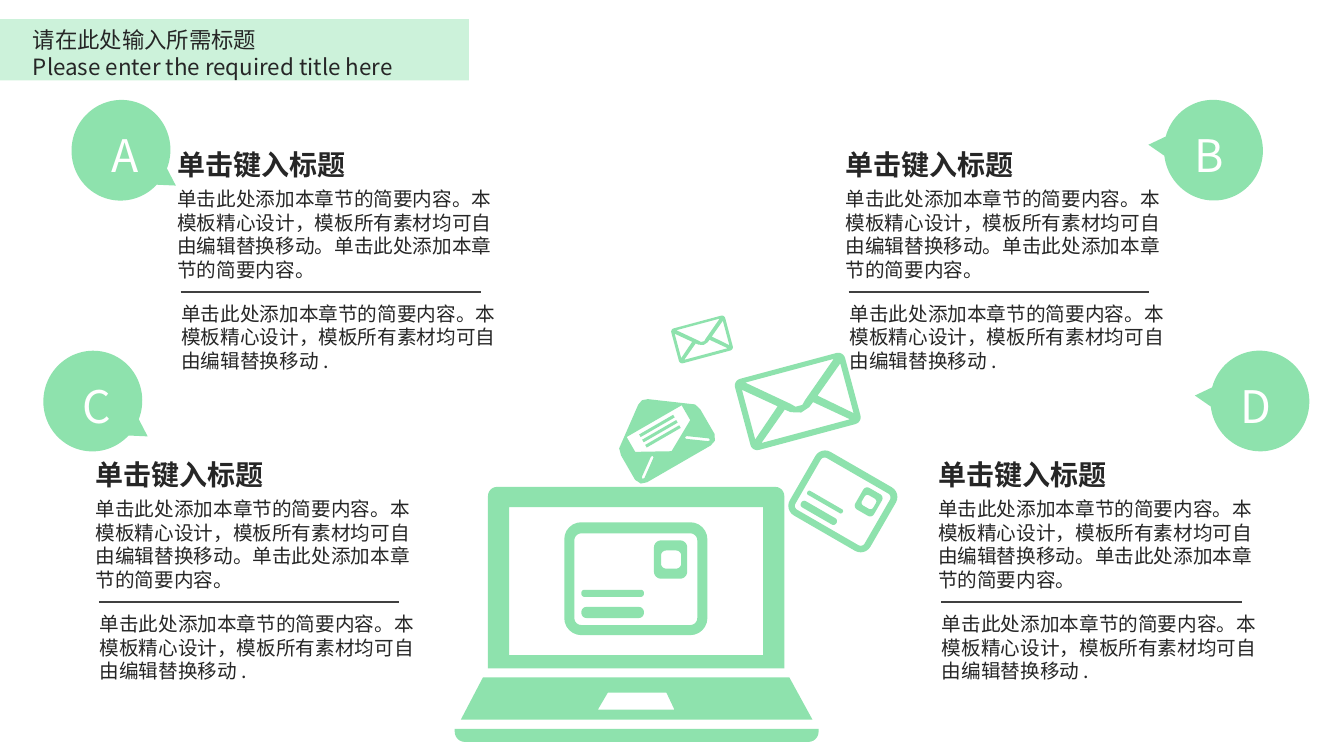
from math import cos, pi, sin

from lxml import etree
from pptx import Presentation
from pptx.dml.color import RGBColor
from pptx.enum.shapes import MSO_CONNECTOR, MSO_SHAPE
from pptx.enum.text import MSO_ANCHOR, PP_ALIGN
from pptx.oxml.ns import qn
from pptx.util import Cm, Pt

RECTANGLE = MSO_SHAPE.RECTANGLE
CALLOUT = MSO_SHAPE.OVAL_CALLOUT
STRAIGHT = MSO_CONNECTOR.STRAIGHT
TOP, MIDDLE = MSO_ANCHOR.TOP, MSO_ANCHOR.MIDDLE
LEFT, CENTER = PP_ALIGN.LEFT, PP_ALIGN.CENTER

FONT = "Noto Sans CJK SC"
COLORS = {"green": "8EE2AD", "pale": "CCF2DA", "text": "262626",
          "rule": "404040", "white": "FFFFFF"}
ART_UNIT = 2.54  # centimetres per unit of the illustrations

HEADING = "单击键入标题"
SUMMARY = ("单击此处添加本章节的简要内容。本模板精心设计，模板所有素材均可自由编辑替换移动。"
           "单击此处添加本章节的简要内容。")
DETAIL = "单击此处添加本章节的简要内容。本模板精心设计，模板所有素材均可自由编辑替换移动 ."

# letter, callout left and top, callout rotation, text left and top (cm)
SECTIONS = [
    ("A", 1.78, 2.54, 284, 4.22, 3.51),
    ("B", 29.31, 2.54, 76, 21.06, 3.51),
    ("C", 1.07, 8.86, 284, 2.16, 11.33),
    ("D", 30.48, 8.86, 76, 23.39, 11.33),
]


def rgb(name):
    return RGBColor.from_string(COLORS[name])


def paint(shape, color):
    shape.shadow.inherit = False
    shape.fill.solid()
    shape.fill.fore_color.rgb = rgb(color)
    shape.line.fill.background()


def write(shape, text, size, spacing=1.3, color="text", bold=False,
          align=LEFT, anchor=TOP):
    frame = shape.text_frame
    frame.word_wrap = True
    frame.vertical_anchor = anchor
    frame.margin_left = frame.margin_right = Cm(0.25)
    frame.margin_top = frame.margin_bottom = Cm(0.13)
    paragraph = frame.paragraphs[0]
    paragraph.text = text
    paragraph.alignment = align
    paragraph.line_spacing = Pt(size * spacing)
    paragraph.space_before = Pt(0)
    font = paragraph.font
    font.name, font.size, font.bold = FONT, Pt(size), bold
    font.color.rgb = rgb(color)
    for run in paragraph.runs:
        east_asian = etree.SubElement(run.font._element, qn("a:ea"))
        east_asian.set("typeface", FONT)


def add_text(slide, left, top, width, height, text, size, **style):
    box = slide.shapes.add_textbox(Cm(left), Cm(top), Cm(width), Cm(height))
    write(box, text, size, **style)


def add_rule(slide, left, top, length):
    rule = slide.shapes.add_connector(
        STRAIGHT, Cm(left), Cm(top), Cm(left + length), Cm(top))
    rule.line.color.rgb = rgb("rule")
    rule.line.width = Pt(1.25)
    etree.SubElement(rule._element.spPr, qn("a:effectLst"))


def rounded(left, top, right, bottom, upper=0.0, lower=0.0, steps=6):
    """Outline of a box with its own radius for upper and lower corners."""
    corners = [(right - lower, bottom - lower, lower),
               (left + lower, bottom - lower, lower),
               (left + upper, top + upper, upper),
               (right - upper, top + upper, upper)]
    points = []
    for quarter, (x, y, radius) in enumerate(corners):
        for step in range(steps + 1 if radius else 1):
            angle = (quarter + step / steps) * pi / 2
            points.append((x + radius * cos(angle), y + radius * sin(angle)))
    return points


def mirrored(points, width):
    return [(width - x, y) for x, y in points]


def add_art(slide, left, top, contours, scale=1.0, rotation=0):
    """Draw all contours as one shape, inner ones becoming holes."""
    unit = Cm(ART_UNIT) * scale
    outlines = [[(x * unit, y * unit) for x, y in points] for points in contours]
    builder = slide.shapes.build_freeform(*outlines[0][0])
    builder.add_line_segments(outlines[0][1:])
    for points in outlines[1:]:
        builder.move_to(*points[0])
        builder.add_line_segments(points[1:])
    art = builder.convert_to_shape(Cm(left), Cm(top))
    art.rotation = rotation
    paint(art, "green")


def laptop():
    return [
        rounded(0.33, 0, 3.27, 1.8, upper=0.09),
        rounded(0.54, 0.2, 3.06, 1.67),
        [(0.28, 1.89), (3.32, 1.89), (3.55, 2.31), (0.06, 2.31)],
        [(1.52, 2.04), (2.1, 2.04), (2.18, 2.21), (1.42, 2.21)],
        rounded(0, 2.4, 3.61, 2.53, lower=0.1),
    ]


def card():
    boxes = [(0, 0, 1.42, 1.12, 0.17), (0.1, 0.11, 1.32, 1.02, 0.07),
             (0.89, 0.18, 1.22, 0.56, 0.07), (0.96, 0.28, 1.16, 0.46, 0.05),
             (0.17, 0.67, 0.79, 0.74, 0.03), (0.17, 0.84, 0.79, 0.95, 0.05)]
    return [rounded(*box, box[-1]) for box in boxes]


def envelope():
    side = [(0.06, 0.11), (0.36, 0.36), (0.06, 0.62)]
    flap = [(0.11, 0.05), (1.02, 0.05), (0.64, 0.37), (0.6, 0.41),
            (0.53, 0.41), (0.49, 0.37)]
    pocket = [(0.11, 0.67), (0.42, 0.41), (0.47, 0.45), (0.57, 0.48),
              (0.66, 0.45), (0.71, 0.41), (1.02, 0.67)]
    return [rounded(0, 0, 1.13, 0.73, 0.07, 0.07),
            side, mirrored(side, 1.13), flap, pocket]


def open_envelope():
    width = 0.91
    half = [(0.4, 0.02), (0.02, 0.3), (0, 0.37), (0, 0.65), (0.03, 0.71),
            (0.09, 0.73)]
    letter = [(0.14, 0.24), (0.14, 0.41), (0.455, 0.585), (0.77, 0.41),
              (0.77, 0.24)]
    fold = [(0.09, 0.68), (0.27, 0.55), (0.27, 0.53), (0.25, 0.53),
            (0.07, 0.66), (0.07, 0.68)]
    lines = [rounded(0.26, y, 0.65, y + 0.03) for y in (0.28, 0.34, 0.4)]
    body = [(0.455, 0)] + half + mirrored(half, width)[::-1]
    return [body, letter, *lines, fold, mirrored(fold, width)]


def add_header(slide):
    band = slide.shapes.add_shape(
        RECTANGLE, Cm(-0.02), Cm(0.48), Cm(11.84), Cm(1.55))
    paint(band, "pale")
    title = slide.shapes.title
    band._element.addnext(title._element)  # bring the title above its band
    title.left, title.top = Cm(0.58), Cm(0.48)
    title.width, title.height = Cm(9.73), Cm(0.99)
    write(title, "请在此处输入所需标题", 16)
    add_text(slide, 0.58, 1.14, 11, 0.99,
             "Please enter the required title here", 16)


def add_section(slide, letter, x, y, rotation, left, top):
    # Text block
    add_text(slide, left, top, 8.46, 1.17, HEADING, 20, bold=True)
    add_text(slide, left, top + 1.07, 8.55, 2.63, SUMMARY, 14, spacing=1.2)
    add_rule(slide, left + 0.33, top + 3.84, 7.57)
    add_text(slide, left + 0.1, top + 3.96, 8.55, 2.04, DETAIL, 14, spacing=1.2)
    # Lettered callout; the letter itself stays upright
    callout = slide.shapes.add_shape(CALLOUT, Cm(x), Cm(y), Cm(2.54), Cm(2.49))
    callout.rotation = rotation
    paint(callout, "green")
    nudge = 0.1 if rotation > 180 else -0.1
    add_text(slide, x + nudge, y + 0.5, 2.54, 1.6, letter, 32,
             color="white", align=CENTER, anchor=MIDDLE)


def main():
    deck = Presentation()
    deck.slide_width, deck.slide_height = Cm(33.87), Cm(19.05)
    slide = deck.slides.add_slide(deck.slide_layouts[5])
    add_header(slide)

    # Laptop with flying mail
    add_art(slide, 11.46, 12.27, laptop())
    add_art(slide, 15.49, 9.96, open_envelope(), rotation=330)
    add_art(slide, 20.07, 11.71, card(), scale=0.65, rotation=30)
    add_art(slide, 18.67, 9.19, envelope(), rotation=345)
    add_art(slide, 14.22, 13.16, card())
    add_art(slide, 16.99, 8.1, envelope(), scale=0.49, rotation=345)

    for section in SECTIONS:
        add_section(slide, *section)
    deck.save("out.pptx")


if __name__ == "__main__":
    main()
